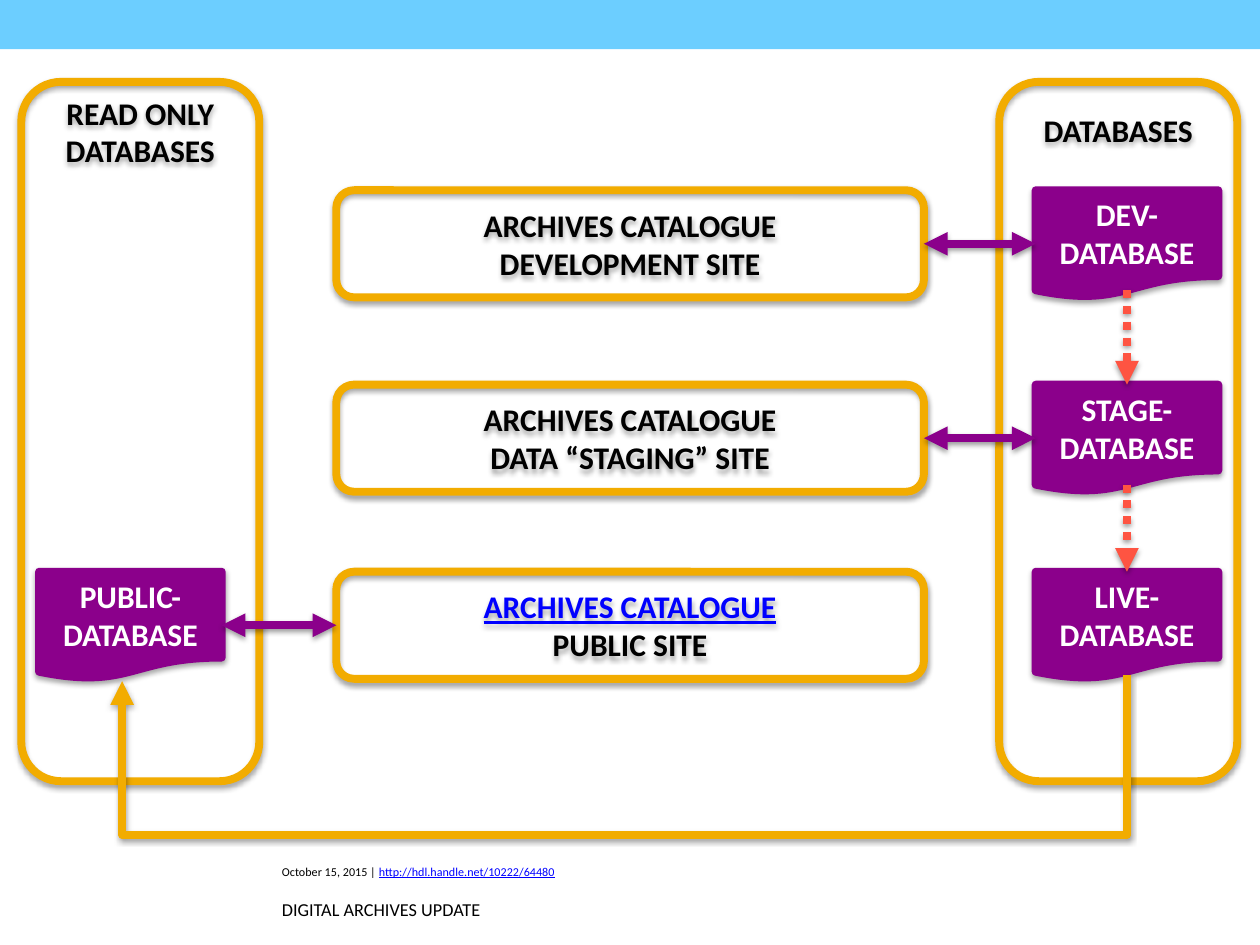
from dataclasses import dataclass

from lxml import etree
from pptx import Presentation
from pptx.dml.color import RGBColor
from pptx.enum import dml, shapes, text
from pptx.oxml.ns import qn
from pptx.util import Pt


@dataclass(frozen=True)
class Theme:
    font: str = "Calibri"
    band: str = "6CCEFF"
    gold: str = "F2AC00"
    purple: str = "8B008B"
    coral: str = "FE5442"
    link: str = "0000FF"
    black: str = "000000"
    white: str = "FFFFFF"
    label_size: float = 18
    date_size: float = 12
    stroke: float = 4.5


THEME = Theme()


def write(paragraph, words, size=THEME.label_size, color=THEME.black,
          bold=False, underline=False, raised=False):
    run = paragraph.add_run()
    run.text = words
    font = run.font
    font.name, font.size, font.bold = THEME.font, Pt(size), bold
    font.underline = underline
    font.color.rgb = RGBColor.from_string(color)
    if raised:
        run._r.get_or_add_rPr().set("baseline", "30000")


def write_lines(frame, lines, align, spacing=None, **style):
    """Each line is a list of (words, overrides) pairs."""
    frame.word_wrap = True
    for index, line in enumerate(lines):
        paragraph = frame.add_paragraph() if index else frame.paragraphs[0]
        paragraph.alignment = align
        if spacing:
            paragraph.line_spacing = spacing
        for words, overrides in line:
            write(paragraph, words, **{**style, **overrides})


def add_shadow(item, opacity, distance):
    """Call after the line is set, so that the effects follow it."""
    effects = etree.SubElement(item._element.spPr, qn("a:effectLst"))
    outer = etree.SubElement(
        effects, qn("a:outerShdw"), blurRad=str(Pt(3.1)),
        dist=str(Pt(distance)), dir="5400000", rotWithShape="0")
    color = etree.SubElement(outer, qn("a:srgbClr"), val=THEME.black)
    etree.SubElement(color, qn("a:alpha"), val=str(opacity * 1000))


class Diagram:
    def __init__(self, slide, theme):
        self.slide, self.theme = slide, theme

    def band(self, width, height):
        band = self.slide.shapes.add_shape(
            shapes.MSO_SHAPE.RECTANGLE, 0, 0, Pt(width), Pt(height))
        band.shadow.inherit = False
        band.fill.solid()
        band.fill.fore_color.rgb = RGBColor.from_string(self.theme.band)
        band.line.fill.background()

    def footer(self, left, top, width, height, lines):
        box = self.slide.shapes.add_textbox(
            Pt(left), Pt(top), Pt(width), Pt(height))
        write_lines(box.text_frame, lines, text.PP_ALIGN.LEFT, spacing=1.2,
                    raised=True)

    def block(self, kind, left, top, width, height, lines, line, fill=None,
              color=THEME.black):
        block = self.slide.shapes.add_shape(
            kind, Pt(left), Pt(top), Pt(width), Pt(height))
        if fill:
            block.fill.solid()
            block.fill.fore_color.rgb = RGBColor.from_string(fill)
        else:
            block.fill.background()
        self.stroke(block, line)
        add_shadow(block, opacity=35, distance=1.8)
        block.text_frame.vertical_anchor = text.MSO_ANCHOR.MIDDLE
        write_lines(block.text_frame, lines, text.PP_ALIGN.CENTER,
                    bold=True, color=color)
        return block

    def panel(self, left, title, inset):
        panel = self.block(shapes.MSO_SHAPE.ROUNDED_RECTANGLE, left, 46.8, 136,
                           399.6, [[(title, {})]], self.theme.gold)
        panel.text_frame.vertical_anchor = text.MSO_ANCHOR.TOP
        panel.text_frame.margin_top = Pt(inset)

    def site(self, top, lines):
        self.block(shapes.MSO_SHAPE.ROUNDED_RECTANGLE, SITE_LEFT, top,
                   SITE_RIGHT - SITE_LEFT, BLOCK_HEIGHT, lines, self.theme.gold)

    def database(self, left, top, name):
        self.block(shapes.MSO_SHAPE.FLOWCHART_DOCUMENT, left, top,
                   DATABASE_WIDTH, BLOCK_HEIGHT, [[(name, {})]],
                   self.theme.purple, self.theme.purple, self.theme.white)

    def stroke(self, item, color):
        item.line.color.rgb = RGBColor.from_string(color)
        item.line.width = Pt(self.theme.stroke)

    def arrow(self, start, end, color, both=False, dotted=False,
              kind=shapes.MSO_CONNECTOR.STRAIGHT):
        arrow = self.slide.shapes.add_connector(
            kind, *(Pt(value) for value in (*start, *end)))
        self.stroke(arrow, color)
        if dotted:
            arrow.line.dash_style = dml.MSO_LINE.ROUND_DOT
        for side in ("headEnd", "tailEnd") if both else ("tailEnd",):
            etree.SubElement(arrow.line._get_or_add_ln(), qn("a:" + side),
                             type="triangle")
        add_shadow(arrow, opacity=38, distance=1.6)
        return arrow

    def return_arrow(self, start, end, bottom, color):
        """Run down from start, left along bottom and up to end."""
        rise, span = end[1] - start[1], start[0] - end[0]
        middle_x, middle_y = (start[0] + end[0]) / 2, (start[1] + end[1]) / 2
        arrow = self.arrow((middle_x - rise / 2, middle_y - span / 2),
                           (middle_x + rise / 2, middle_y + span / 2),
                           color, kind=shapes.MSO_CONNECTOR.ELBOW)
        properties = arrow._element.spPr
        properties.find(qn("a:xfrm")).set("rot", "5400000")
        geometry = properties.find(qn("a:prstGeom"))
        geometry.set("prst", "bentConnector4")
        guides = geometry.find(qn("a:avLst"))
        if guides is None:
            guides = etree.SubElement(geometry, qn("a:avLst"))
        turns = {"adj1": (bottom - start[1]) / rise, "adj2": 1}
        for name, ratio in turns.items():
            etree.SubElement(guides, qn("a:gd"), name=name,
                             fmla=f"val {round(ratio * 100000)}")


SITE_LEFT, SITE_RIGHT = 192.2, 528
BLOCK_HEIGHT = 61.2
DATABASE_WIDTH = 104.4
PUBLIC_LEFT, DATABASE_LEFT = 22.3, 591.8
ROW_TOPS = DEV_TOP, STAGE_TOP, LIVE_TOP = 108.7, 219.8, 326.7


def main():
    deck = Presentation()
    deck.slide_width, deck.slide_height = Pt(720), Pt(540)
    slide = deck.slides.add_slide(deck.slide_layouts[6])
    diagram = Diagram(slide, THEME)
    link = {"color": THEME.link, "underline": True}
    small = {"size": THEME.date_size}

    diagram.band(720, 28.1)
    diagram.footer(154, 486, 355, 36, [
        [("October 15, 2015 | ", small),
         ("http://hdl.handle.net/10222/64480", {**small, **link})],
        [("DIGITAL ARCHIVES UPDATE", {})],
    ])

    diagram.panel(571, "DATABASES", inset=10)
    diagram.panel(12.2, "READ ONLY DATABASES", inset=0)

    sites = [("DEVELOPMENT SITE", {}), ("DATA “STAGING” SITE", {}),
             ("PUBLIC SITE", link)]
    for top, (purpose, style) in zip(ROW_TOPS, sites):
        diagram.site(top, [[("ARCHIVES CATALOGUE", style)], [(purpose, {})]])

    for top, stage in zip(ROW_TOPS, ("DEV", "STAGE", "LIVE")):
        diagram.database(DATABASE_LEFT, top, f"{stage}-DATABASE")
    diagram.database(PUBLIC_LEFT, LIVE_TOP, "PUBLIC-DATABASE")

    center = DATABASE_LEFT + DATABASE_WIDTH / 2
    diagram.return_arrow((center, 386), (69.8, 389.3), 477.4, THEME.gold)
    for upper, lower in zip(ROW_TOPS, ROW_TOPS[1:]):
        diagram.arrow((center, upper + 57.2), (center, lower), THEME.coral,
                      dotted=True)

    links = [(DEV_TOP, SITE_RIGHT, DATABASE_LEFT),
             (STAGE_TOP, SITE_RIGHT, DATABASE_LEFT),
             (LIVE_TOP, PUBLIC_LEFT + DATABASE_WIDTH, SITE_LEFT)]
    for top, left, right in links:
        middle = top + BLOCK_HEIGHT / 2
        diagram.arrow((left, middle), (right, middle), THEME.purple, both=True)

    deck.save("out.pptx")


if __name__ == "__main__":
    main()
